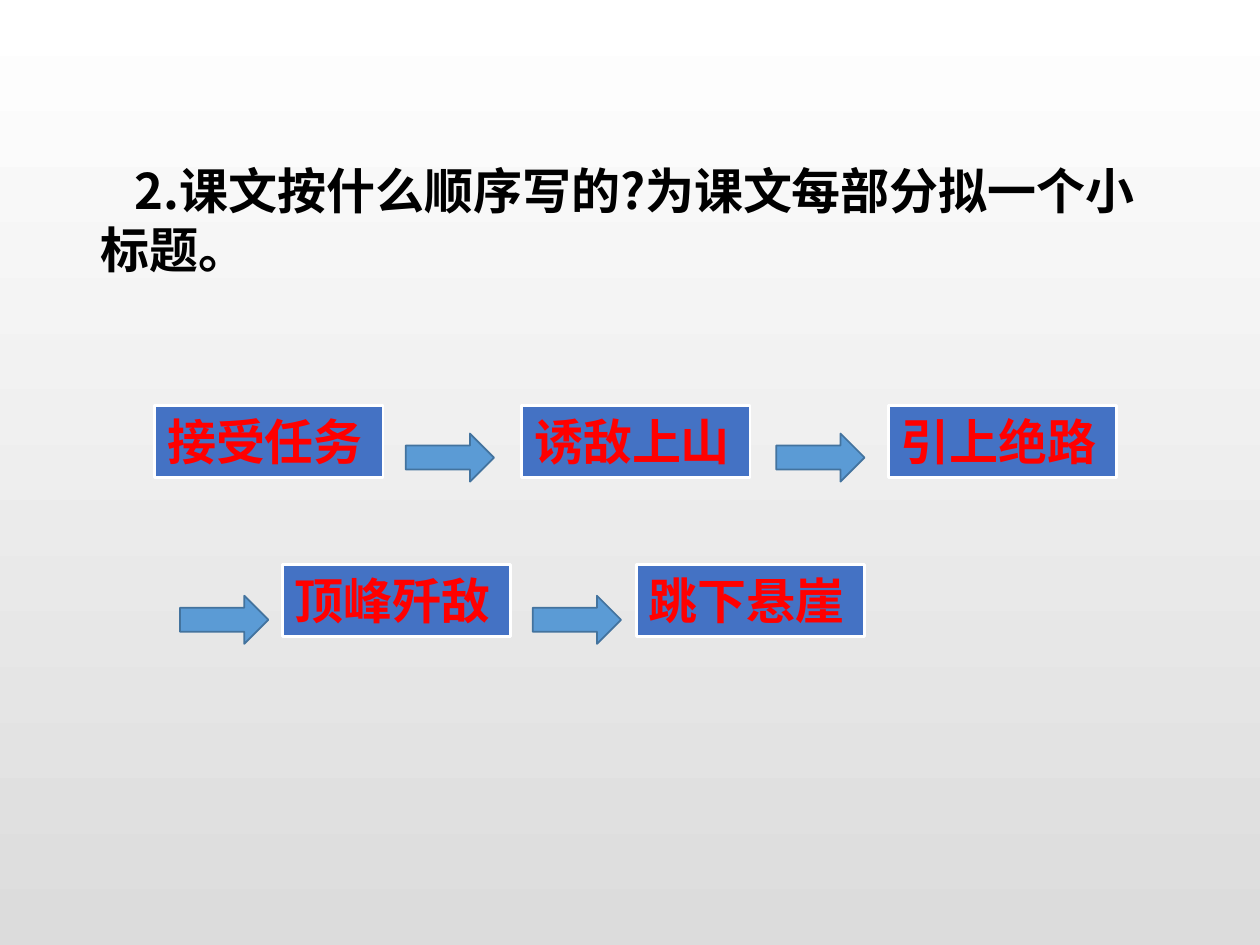
"""Build a slide that asks for the order of a text and shows its five parts as a flow."""
from pptx import Presentation
from pptx.dml.color import RGBColor
from pptx.enum.shapes import MSO_SHAPE as Kind
from pptx.enum.text import MSO_ANCHOR as Anchor, MSO_AUTO_SIZE as Fit, PP_ALIGN as Align
from pptx.oxml.ns import qn
from pptx.util import Cm, Pt

WHITE = RGBColor(0xFF, 0xFF, 0xFF)
GREY = RGBColor(0xDC, 0xDC, 0xDC)
BLACK = RGBColor(0, 0, 0)
RED = RGBColor(0xFF, 0, 0)
BLUE = RGBColor(0x44, 0x72, 0xC4)
SKY = RGBColor(0x5B, 0x9B, 0xD5)
EDGE = RGBColor(0x43, 0x73, 0x9E)
FACE = "Noto Sans CJK SC"
FONT = {"name": FACE, "size": Pt(28), "bold": True}
FRAME = {"word_wrap": True, "auto_size": Fit.SHAPE_TO_FIT_TEXT, "vertical_anchor": Anchor.TOP}


def write(shape, text, color):
    frame = shape.text_frame
    for key, value in FRAME.items():
        setattr(frame, key, value)
    para = frame.paragraphs[0]
    para.alignment = Align.LEFT
    run = para.add_run()
    run.text = text
    for key, value in FONT.items():
        setattr(run.font, key, value)
    run.font.color.rgb = color
    east = run.font._element.makeelement(qn("a:ea"), {"typeface": FACE})
    run.font._element.find(qn("a:latin")).addnext(east)
    return para


def draw(kind, left, top, width, height, fill, edge, weight):
    shape = slide.shapes.add_shape(kind, Cm(left), Cm(top), Cm(width), Cm(height))
    shape.shadow.inherit = False
    shape.fill.solid()
    shape.fill.fore_color.rgb = fill
    shape.line.color.rgb = edge
    shape.line.width = Pt(weight)
    return shape


deck = Presentation()
deck.slide_width, deck.slide_height = Cm(25.4), Cm(19.05)
slide = deck.slides.add_slide(deck.slide_layouts[6])
back = slide.background.fill
back.gradient()
back.gradient_angle = 270
for stop, color, place in zip(back.gradient_stops, (WHITE, GREY), (0, 1)):
    stop.color.rgb = color
    stop.position = place

title = slide.shapes.add_textbox(Cm(1.78), Cm(3.12), Cm(21.49), Cm(2.64))
para = write(title, "2.课文按什么顺序写的?为课文每部分拟一个小标题。", BLACK)
para.space_before = Pt(18)
para._p.get_or_add_pPr().set("indent", str(Cm(0.69)))

rows = [
    (8.18, 8.74, [(3.12, "接受任务"), (10.52, "诱敌上山"), (17.91, "引上绝路")], [8.18, 15.65]),
    (11.38, 12.01, [(5.69, "顶峰歼敌"), (12.83, "跳下悬崖")], [3.63, 10.74]),
]
for top, low, steps, arrows in rows:
    for left, text in steps:
        write(draw(Kind.RECTANGLE, left, top, 4.6, 1.45, BLUE, WHITE, 1.5), text, RED)
    for left in arrows:
        draw(Kind.RIGHT_ARROW, left, low, 1.78, 0.97, SKY, EDGE, 1)

deck.save("out.pptx")
